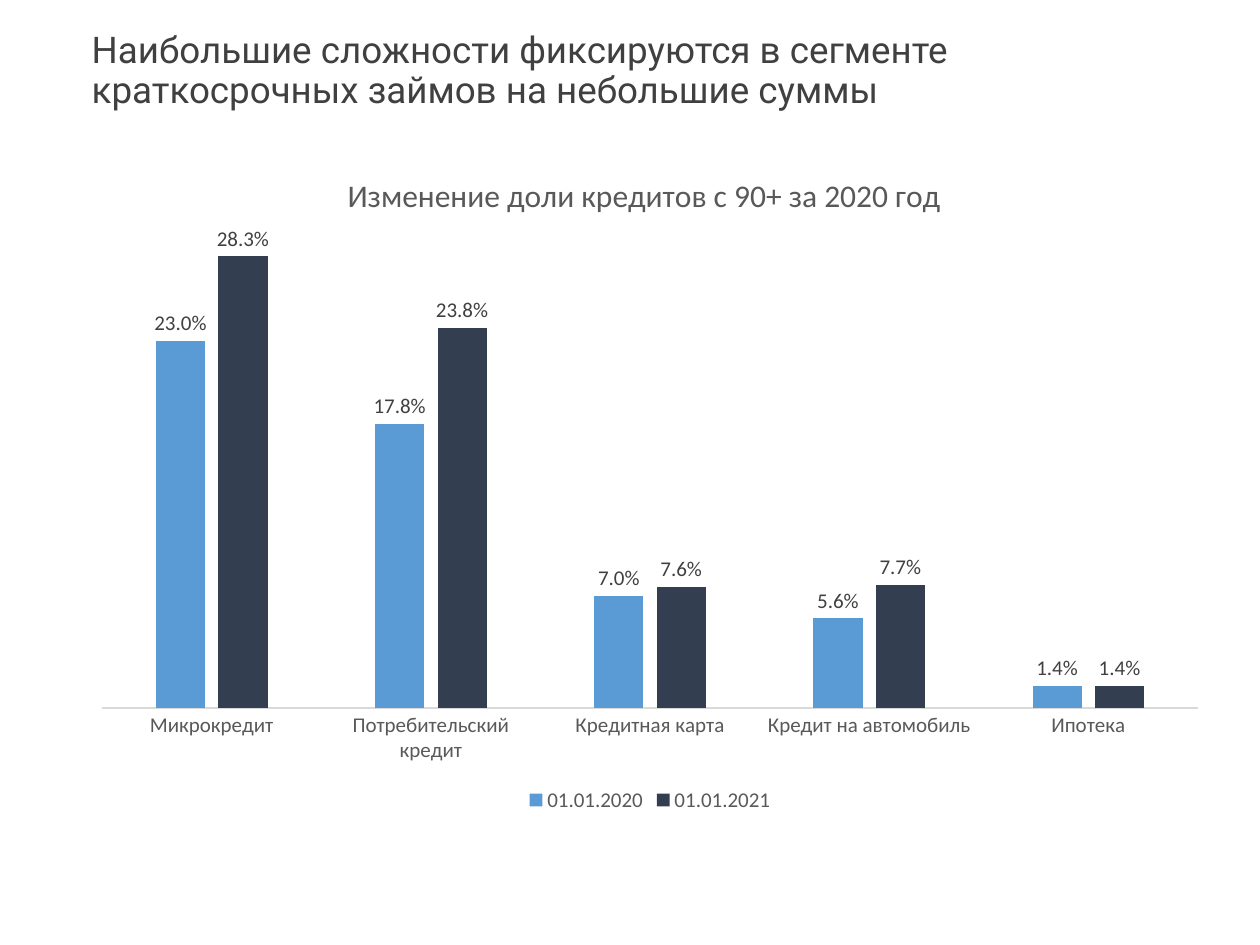
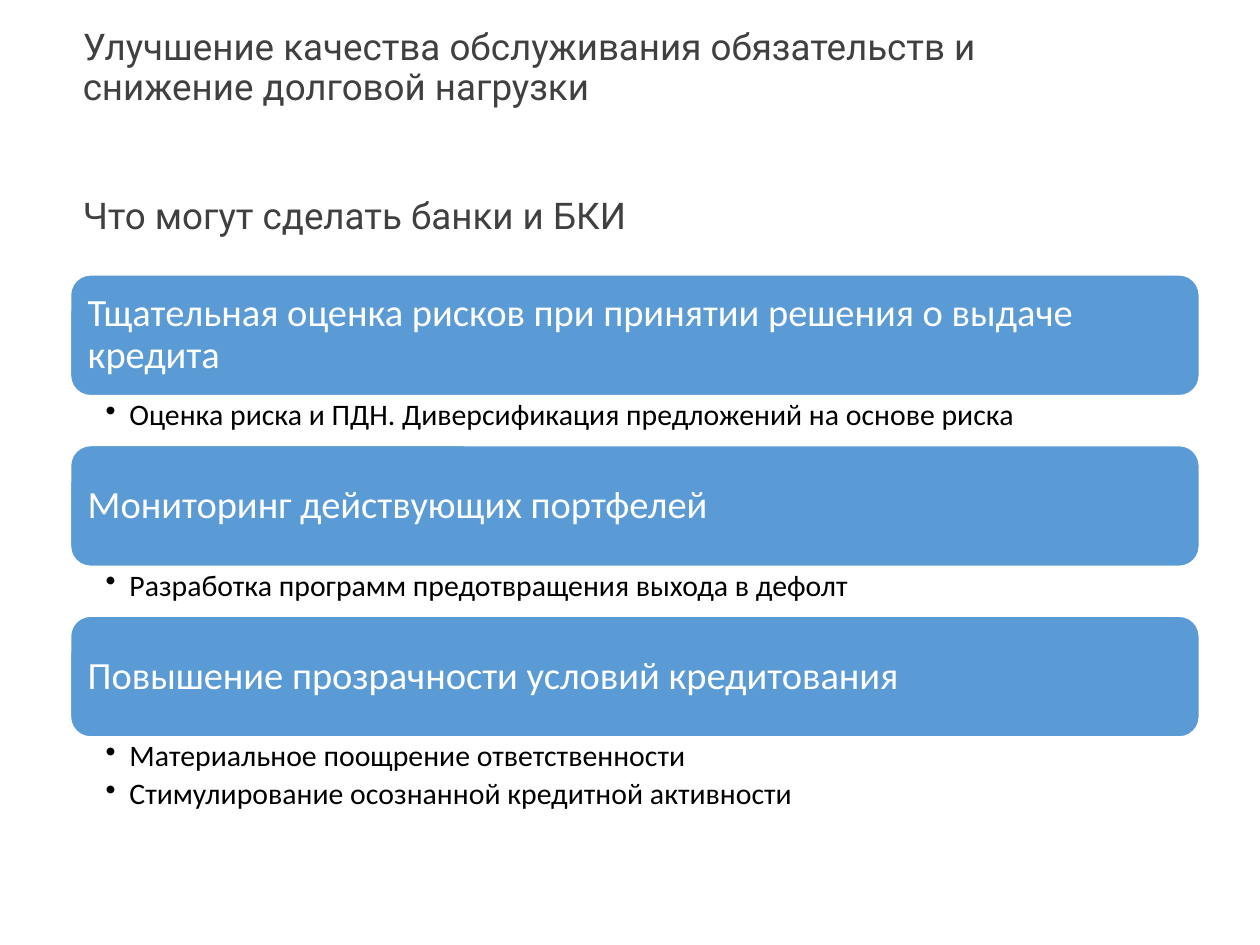
from lxml import etree
from pptx import Presentation, util as u
from pptx.chart.data import CategoryChartData
from pptx.dml.color import RGBColor
from pptx.enum import chart as ch, shapes, text
from pptx.oxml import parse_xml
from pptx.oxml.ns import nsdecls, qn

BLUE, NAVY, WHITE, BLACK = "5B9BD5", "333F50", "FFFFFF", "000000"
DARK, GREY, RULE = "404040", "595959", "D9D9D9"
HEAD = dict(font="Roboto", size=21, color=DARK)


def rgb(value):
    return RGBColor.from_string(value)


def write(sp, *lines, font="Calibri", size=18, color=BLACK, anchor="TOP",
          insets=(0.25, 0.13, 0.25, 0.13), bullet=False, after=0):
    tf = sp.text_frame
    tf.word_wrap = True
    tf.vertical_anchor = getattr(text.MSO_ANCHOR, anchor)
    tf.margin_left, tf.margin_top, tf.margin_right, tf.margin_bottom = map(u.Cm, insets)
    for i, line in enumerate(lines):
        p = tf.add_paragraph() if i else tf.paragraphs[0]
        p.alignment = text.PP_ALIGN.LEFT
        p.line_spacing = 0.9
        p.space_after = u.Pt(after)
        if bullet:
            p.level = 1
            pPr = p._p.get_or_add_pPr()
            pPr.set("marL", str(u.Cm(0.48)))
            pPr.set("indent", str(-u.Cm(0.48)))
            etree.SubElement(pPr, qn("a:buChar")).set("char", "•")
        r = p.add_run()
        r.text = line
        r.font.name, r.font.size = font, u.Pt(size)
        r.font.color.rgb = rgb(color)


prs = Presentation()
prs.slide_width, prs.slide_height = u.Cm(25.4), u.Cm(19.05)
blank = prs.slide_layouts[6]

# Slide 1: title
s = prs.slides.add_slide(blank)
sp = s.shapes.add_textbox(u.Cm(1.6), u.Cm(0.51), u.Cm(20.35), u.Cm(1.14))
write(sp, "Наибольшие сложности фиксируются в сегменте краткосрочных займов на небольшие суммы", **HEAD)

# Slide 1: overdue share by product
data = CategoryChartData(number_format="0.0%")
data.categories = ["Микрокредит", "Потребительский кредит", "Кредитная карта",
                   "Кредит на автомобиль", "Ипотека"]
data.add_series("01.01.2020", [0.23, 0.178, 0.07, 0.056, 0.014])
data.add_series("01.01.2021", [0.283, 0.238, 0.076, 0.077, 0.014])
chart = s.shapes.add_chart(ch.XL_CHART_TYPE.COLUMN_CLUSTERED, u.Cm(1.6), u.Cm(2.69),
                           u.Cm(23.01), u.Cm(13.79), data).chart
chart.font.name, chart.font.size = "Calibri", u.Pt(12)
chart.font.color.rgb = rgb(GREY)

p = chart.chart_title.text_frame.paragraphs[0]
r = p.add_run()
r.text = "Изменение доли кредитов с 90+ за 2020 год"
r.font.name, r.font.size, r.font.bold = "Calibri", u.Pt(18), False
r.font.color.rgb = rgb(GREY)
chart.chart_title.include_in_layout = False

chart.has_legend = True
chart.legend.position = ch.XL_LEGEND_POSITION.BOTTOM
chart.legend.include_in_layout = False

axis = chart.category_axis
axis.major_tick_mark = ch.XL_TICK_MARK.NONE
axis.format.line.color.rgb = rgb(RULE)
axis.format.line.width = u.Pt(0.75)
axis = chart.value_axis
axis.visible = axis.has_major_gridlines = False
axis.minimum_scale, axis.maximum_scale = 0, 0.3

plot = chart.plots[0]
plot.gap_width, plot.overlap = 219, -27
plot.vary_by_categories = False
for series, color in zip(plot.series, (BLUE, NAVY)):
    series.format.fill.solid()
    series.format.fill.fore_color.rgb = rgb(color)
    labels = series.data_labels
    labels.show_value = True
    labels.number_format, labels.number_format_is_linked = "0.0%", False
    labels.position = ch.XL_LABEL_POSITION.OUTSIDE_END
    labels.font.name, labels.font.size = "Calibri", u.Pt(12)
    labels.font.color.rgb = rgb(DARK)

# Fixed places of the chart title and the plot area, as shares of the chart
title_xml = chart.chart_title._element
plot_xml = chart._chartSpace.chart.plotArea
for parent, place, inner in ((title_xml, dict(x=0.23, y=0.05), ""),
                             (plot_xml, dict(x=0.02, y=0.14, w=0.96, h=0.7),
                              '<c:layoutTarget val="inner"/>')):
    for old in parent.findall(qn("c:layout")):
        parent.remove(old)
    modes = "".join(f'<c:{k}Mode val="edge"/>' for k in "xy")
    sizes = "".join(f'<c:{k} val="{v}"/>' for k, v in place.items())
    layout = parse_xml(f'<c:layout {nsdecls("c")}><c:manualLayout>{inner}{modes}{sizes}'
                       '</c:manualLayout></c:layout>')
    parent.insert(1 if parent is title_xml else 0, layout)

# Slide 2: title and subtitle
s = prs.slides.add_slide(blank)
for top, height, line in (
        (0.46, 2.26, "Улучшение качества обслуживания обязательств и снижение долговой нагрузки"),
        (3.86, 0.97, "Что могут сделать банки и БКИ")):
    sp = s.shapes.add_textbox(u.Cm(1.42), u.Cm(top), u.Cm(20.9), u.Cm(height))
    write(sp, line, **HEAD)

# Slide 2: measures, each a band with bullets under it
measures = [
    ("Тщательная оценка рисков при принятии решения о выдаче кредита",
     ["Оценка риска и ПДН. Диверсификация предложений на основе риска"]),
    ("Мониторинг действующих портфелей",
     ["Разработка программ предотвращения выхода в дефолт"]),
    ("Повышение прозрачности условий кредитования",
     ["Материальное поощрение ответственности",
      "Стимулирование осознанной кредитной активности"]),
]
left, width, band = u.Cm(1.42), u.Cm(22.76), u.Cm(2.44)
for i, (measure, steps) in enumerate(measures):
    top = u.Cm(5.54 + 3.44 * i)
    sp = s.shapes.add_shape(shapes.MSO_SHAPE.ROUNDED_RECTANGLE, left, top, width, band)
    sp.shadow.inherit = False
    sp.fill.solid()
    sp.fill.fore_color.rgb = rgb(BLUE)
    sp.line.color.rgb = rgb(WHITE)
    sp.line.width = u.Pt(1)
    write(sp, measure, size=22, color=WHITE, anchor="MIDDLE", insets=[0.23] * 4)
    sp = s.shapes.add_textbox(left, top + band, width, u.Cm(0.36 + 0.65 * len(steps)))
    write(sp, *steps, size=17, insets=(0.71, 0.08, 0.43, 0.08), bullet=True, after=3.4)

prs.save("out.pptx")
